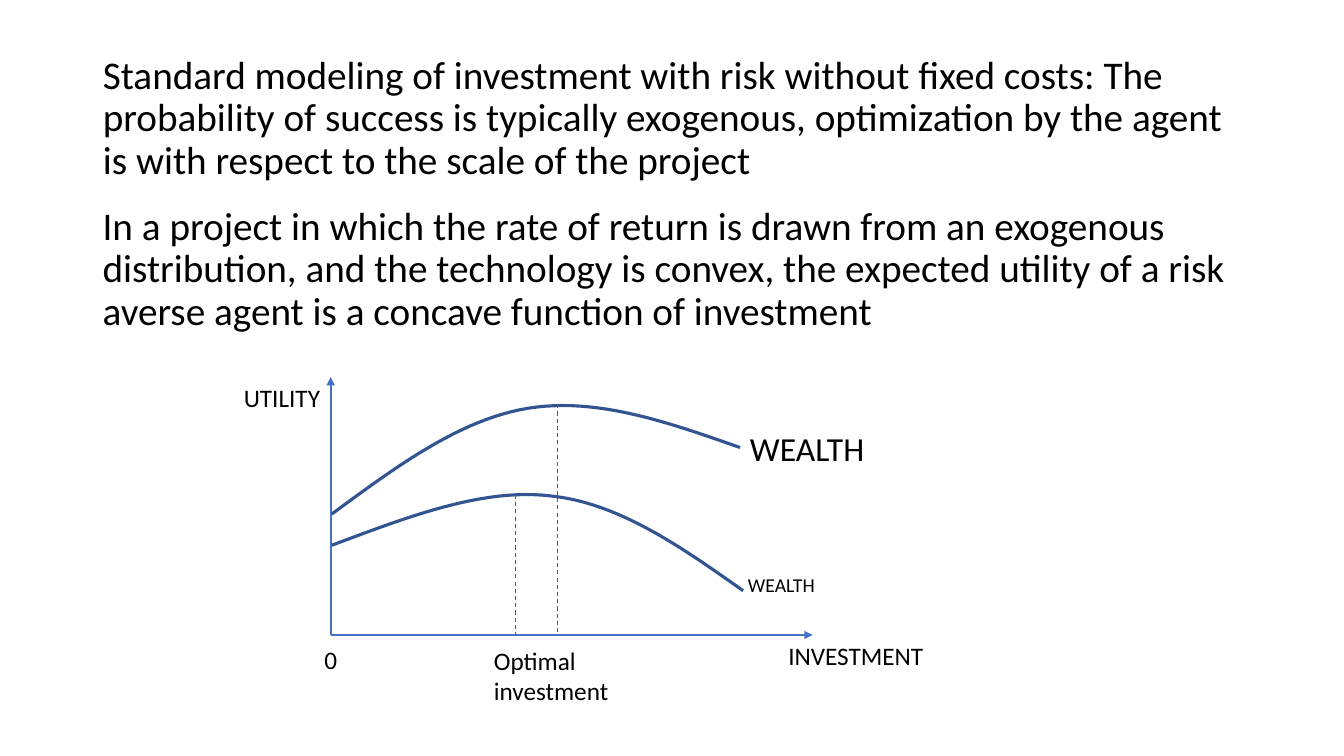
from dataclasses import dataclass

from lxml import etree
from pptx import Presentation
from pptx.dml.color import RGBColor
from pptx.enum import dml, text
from pptx.oxml import ns
from pptx.util import Inches, Pt


@dataclass(frozen=True)
class Theme:
    font: str = "Calibri"
    ink: str = "000000"
    axis: str = "4472C4"
    curve: str = "325491"
    guide: str = "595959"
    statement_size: int = 28
    rich_size: int = 24
    label_size: int = 18
    poor_size: int = 14
    axis_width: float = 1.5
    curve_width: float = 2.25
    guide_width: float = 0.75


THEME = Theme()
STATEMENT_SPACING = 0.9
ORIGIN_X, ORIGIN_Y = 3.28, 6.3
CURVE_STEPS = 24

TITLE = (
    "Standard modeling of investment with risk without fixed costs: The "
    "probability of success is typically exogenous, optimization by the agent "
    "is with respect to the scale of the project"
)
STATEMENT = (
    "In a project in which the rate of return is drawn from an exogenous "
    "distribution, and the technology is convex, the expected utility of a risk "
    "averse agent is a concave function of investment"
)

# Anchor and control points of two joined cubic Bezier spans.
RICH_UTILITY = [(3.29, 5.1), (3.93, 4.63), (4.56, 4.16), (5.24, 4.05),
                (5.92, 3.94), (6.63, 4.19), (7.34, 4.44)]
POOR_UTILITY = [(3.29, 5.41), (4.04, 5.13), (4.78, 4.84), (5.46, 4.92),
                (6.14, 4.99), (6.76, 5.43), (7.37, 5.86)]

# Wording, left, top, width, height, type size
LABELS = [
    ("UTILITY", 2.32, 3.74, 1.6, 0.4, THEME.label_size),
    ("INVESTMENT", 7.72, 6.3, 1.6, 0.4, THEME.label_size),
    ("0", 3.12, 6.34, 0.4, 0.4, THEME.label_size),
    ("Optimal investment", 4.8, 6.35, 1.73, 0.71, THEME.label_size),
    ("WEALTH", 7.34, 4.2, 4.94, 0.5, THEME.rich_size),
    ("WEALTH", 7.32, 5.63, 2.19, 0.34, THEME.poor_size),
]


def write(shape, wording, size, line_spacing=None):
    frame = shape.text_frame
    frame.word_wrap = True
    frame.auto_size = text.MSO_AUTO_SIZE.NONE
    frame.text = wording
    paragraph = frame.paragraphs[0]
    paragraph.alignment = text.PP_ALIGN.LEFT
    paragraph.line_spacing = line_spacing
    paragraph.font.name = THEME.font
    paragraph.font.size = Pt(size)
    paragraph.font.color.rgb = RGBColor.from_string(THEME.ink)


def add_title(slide):
    title = slide.shapes.title
    title.left, title.top = Inches(0.92), Inches(0.67)
    title.width, title.height = Inches(11.5), Inches(1.45)
    write(title, TITLE, THEME.statement_size, STATEMENT_SPACING)
    title.text_frame.vertical_anchor = text.MSO_ANCHOR.MIDDLE
    title.text_frame.margin_bottom = Inches(0.48)


def add_text(slide, wording, left, top, width, height, size, line_spacing=None):
    box = slide.shapes.add_textbox(
        Inches(left), Inches(top), Inches(width), Inches(height))
    write(box, wording, size, line_spacing)


def set_line(line, color, width):
    line.color.rgb = RGBColor.from_string(color)
    line.width = Pt(width)


def add_straight(slide, start, end, color, width):
    """Draw a straight line without a shadow and return its line format."""
    connector = slide.shapes.add_connector(
        1, *(Inches(value) for value in (*start, *end)))
    set_line(connector.line, color, width)
    etree.SubElement(connector._element.spPr, ns.qn("a:effectLst"))
    return connector.line


def add_axis(slide, start, end):
    line = add_straight(slide, start, end, THEME.axis, THEME.axis_width)
    etree.SubElement(line._get_or_add_ln(), ns.qn("a:tailEnd"), type="triangle")


def add_optimum(slide, x, top):
    """Drop a dashed guide from the peak of a curve to the investment axis."""
    line = add_straight(
        slide, (x, top), (x, ORIGIN_Y), THEME.guide, THEME.guide_width)
    line.dash_style = dml.MSO_LINE.DASH


def bezier_point(span, t):
    weights = ((1 - t) ** 3, 3 * t * (1 - t) ** 2, 3 * t ** 2 * (1 - t), t ** 3)
    return tuple(
        Inches(sum(w * value for w, value in zip(weights, axis)))
        for axis in zip(*span))


def add_curve(slide, points):
    outline = [
        bezier_point(points[first:first + 4], step / CURVE_STEPS)
        for first in range(0, len(points) - 1, 3)
        for step in range(CURVE_STEPS + 1)
    ]
    builder = slide.shapes.build_freeform(*outline[0])
    builder.add_line_segments(outline[1:], close=False)
    curve = builder.convert_to_shape()
    curve.shadow.inherit = False
    curve.fill.background()
    set_line(curve.line, THEME.curve, THEME.curve_width)


def main():
    deck = Presentation()
    deck.slide_width, deck.slide_height = Inches(13.33), Inches(7.5)
    slide = deck.slides.add_slide(deck.slide_layouts.get_by_name("Title Only"))

    add_title(slide)
    add_text(slide, STATEMENT, 0.92, 2, 11.5, 1.45,
             THEME.statement_size, STATEMENT_SPACING)

    add_axis(slide, (ORIGIN_X, ORIGIN_Y), (8.06, ORIGIN_Y))
    add_axis(slide, (ORIGIN_X, ORIGIN_Y), (ORIGIN_X, 3.74))
    for utility in (RICH_UTILITY, POOR_UTILITY):
        add_curve(slide, utility)
    for x, peak in ((5.53, 4.01), (5.11, 4.91)):
        add_optimum(slide, x, peak)
    for label in LABELS:
        add_text(slide, *label)

    deck.save("out.pptx")


if __name__ == "__main__":
    main()
